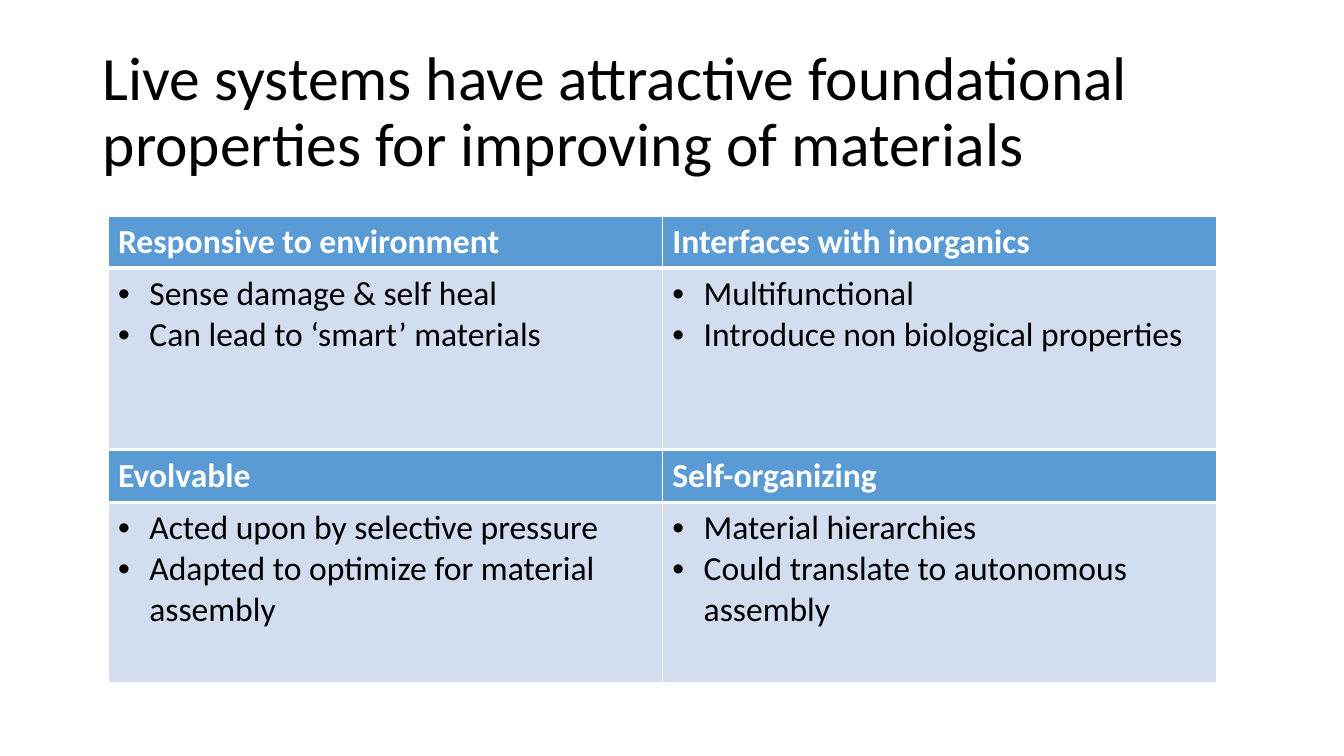
from dataclasses import dataclass

from lxml.etree import SubElement
from pptx import Presentation
from pptx.dml.color import RGBColor
from pptx.enum.text import MSO_ANCHOR
from pptx.oxml.ns import qn
from pptx.util import Cm, Pt


@dataclass(frozen=True)
class Theme:
    """Colours, font and type sizes of the slide."""

    font: str = "Calibri"
    ink: str = "000000"
    white: str = "FFFFFF"
    heading_fill: str = "5B9BD5"
    body_fill: str = "D2DEEF"
    title_size: int = 44
    table_size: int = 24
    thin_line: int = 1
    thick_line: int = 3


@dataclass(frozen=True)
class Property:
    """A property of live systems and its consequences."""

    heading: str
    points: tuple[str, ...]


THEME = Theme()
TITLE = "Live systems have attractive foundational properties for improving of materials"
PROPERTY_ROWS = (
    (
        Property("Responsive to environment",
                 ("Sense damage & self heal", "Can lead to ‘smart’ materials")),
        Property("Interfaces with inorganics",
                 ("Multifunctional", "Introduce non biological properties")),
    ),
    (
        Property("Evolvable",
                 ("Acted upon by selective pressure",
                  "Adapted to optimize for material assembly")),
        Property("Self-organizing",
                 ("Material hierarchies", "Could translate to autonomous assembly")),
    ),
)
TABLE_LEFT, TABLE_TOP, TABLE_STEP = 2.72, 5.46, 5.9
COLUMN_WIDTH, HEADING_HEIGHT, BODY_HEIGHT = 13.97, 1.3, 4.55
BULLET_INDENT = 0.79


def add_span(para, text: str, size: int, color: str, bold: bool = False) -> None:
    """Add formatted text to a paragraph."""
    span = para.add_run()
    span.text = text
    formats = {"name": THEME.font, "size": Pt(size), "bold": bold}
    for name, value in formats.items():
        setattr(span.font, name, value)
    span.font.color.rgb = RGBColor.from_string(color)


def add_bullet(para) -> None:
    """Give a paragraph a hanging round bullet."""
    properties = para._p.get_or_add_pPr()
    indent = Cm(BULLET_INDENT)
    properties.set("marL", str(indent))
    properties.set("indent", str(-indent))
    SubElement(properties, qn("a:buFont"), typeface="Arial")
    SubElement(properties, qn("a:buChar"), char="•")


def style_cell(cell, fill: str, top: int, bottom: int) -> None:
    """Set the white borders and the fill of a cell."""
    properties = cell._tc.get_or_add_tcPr()
    widths = {"a:lnL": THEME.thin_line, "a:lnR": THEME.thin_line,
              "a:lnT": top, "a:lnB": bottom}
    for tag, width in widths.items():
        line = SubElement(properties, qn(tag), w=str(Pt(width)))
        solid = SubElement(line, qn("a:solidFill"))
        SubElement(solid, qn("a:srgbClr"), val=THEME.white)
    cell.fill.solid()
    cell.fill.fore_color.rgb = RGBColor.from_string(fill)


def add_title(page) -> None:
    """Add the slide title."""
    box = page.shapes.add_textbox(Cm(2.34), Cm(1.02), Cm(29.21), Cm(3.68))
    formats = {"word_wrap": True, "vertical_anchor": MSO_ANCHOR.MIDDLE}
    for name, value in formats.items():
        setattr(box.text_frame, name, value)
    para = box.text_frame.paragraphs[0]
    para.line_spacing = 0.9
    add_span(para, TITLE, THEME.title_size, THEME.ink)


def add_property_table(page, top: float, entries: tuple[Property, ...]) -> None:
    """Add a table with one column for each property."""
    heights = (HEADING_HEIGHT, BODY_HEIGHT)
    table = page.shapes.add_table(
        len(heights), len(entries), Cm(TABLE_LEFT), Cm(top),
        Cm(COLUMN_WIDTH * len(entries)), Cm(sum(heights)),
    ).table
    table.horz_banding = False
    for row, height in zip(table.rows, heights):
        row.height = Cm(height)
    for index, entry in enumerate(entries):
        table.columns[index].width = Cm(COLUMN_WIDTH)
        heading, body = table.cell(0, index), table.cell(1, index)
        style_cell(heading, THEME.heading_fill, THEME.thin_line, THEME.thick_line)
        style_cell(body, THEME.body_fill, THEME.thick_line, THEME.thin_line)
        add_span(heading.text_frame.paragraphs[0], entry.heading,
                 THEME.table_size, THEME.white, bold=True)
        frame = body.text_frame
        for number, point in enumerate(entry.points):
            para = frame.add_paragraph() if number else frame.paragraphs[0]
            add_bullet(para)
            add_span(para, point, THEME.table_size, THEME.ink)


def main() -> None:
    """Build and save the deck."""
    deck = Presentation()
    deck.slide_width, deck.slide_height = Cm(33.87), Cm(19.05)
    page = deck.slides.add_slide(deck.slide_layouts[6])
    add_title(page)
    for index, entries in enumerate(PROPERTY_ROWS):
        add_property_table(page, TABLE_TOP + index * TABLE_STEP, entries)
    deck.save("out.pptx")


if __name__ == "__main__":
    main()
